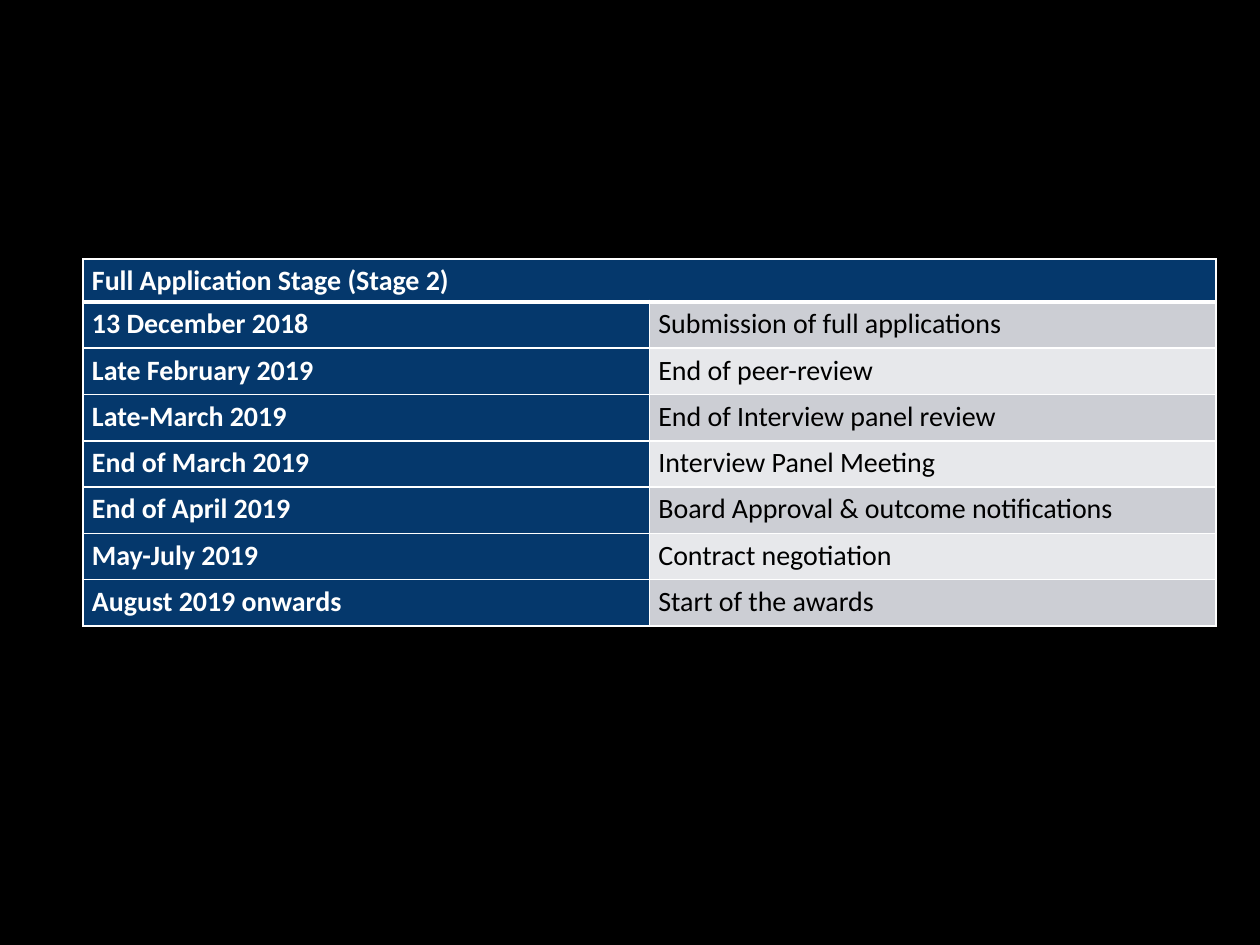
from lxml import etree
from pptx import Presentation
from pptx.dml.color import RGBColor
from pptx.enum.text import MSO_ANCHOR, PP_ALIGN
from pptx.oxml.ns import qn
from pptx.util import Pt

JUSTIFY = PP_ALIGN.JUSTIFY
TOP = MSO_ANCHOR.TOP

BLACK = RGBColor(0x00, 0x00, 0x00)
WHITE = RGBColor(0xFF, 0xFF, 0xFF)
NAVY = RGBColor(0x05, 0x38, 0x6C)
BANDS = (RGBColor(0xCC, 0xCE, 0xD4), RGBColor(0xE7, 0xE8, 0xEB))

PX = 914400 / 126  # EMU in one px
BLANK_LAYOUT = 6

TITLE = "Full Application Stage (Stage 2)"
STAGES = [
    ("13 December 2018", "Submission of full applications"),
    ("Late February 2019", "End of peer-review"),
    ("Late-March 2019", "End of Interview panel review"),
    ("End of March 2019", "Interview Panel Meeting"),
    ("End of April 2019", "Board Approval & outcome notifications"),
    ("May-July 2019", "Contract negotiation"),
    ("August 2019 onwards", "Start of the awards"),
]


def emu(px):
    return round(px * PX)


class SlideBuilder:
    font = "Calibri"
    size = Pt(16)
    inset = 9
    line = 1
    header_line = 3

    def __init__(self, s):
        self.s = s

    def background(self, color):
        fill = self.s.background.fill
        fill.solid()
        fill.fore_color.rgb = color

    def borders(self, cell, top, bottom):
        tc_pr = cell._tc.get_or_add_tcPr()
        widths = {"L": self.line, "R": self.line, "T": top, "B": bottom}
        for side, width in widths.items():
            ln = etree.SubElement(tc_pr, qn(f"a:ln{side}"), w=str(Pt(width)))
            solid = etree.SubElement(ln, qn("a:solidFill"))
            etree.SubElement(solid, qn("a:srgbClr"), val=str(WHITE))

    def cell(self, cell, text, fill, color, bold, top=line, bottom=line):
        # Borders come before the fill in the cell properties
        self.borders(cell, top, bottom)
        cell.fill.solid()
        cell.fill.fore_color.rgb = fill
        cell.margin_left = cell.margin_right = emu(self.inset)
        cell.margin_top = cell.margin_bottom = 0
        cell.vertical_anchor = TOP
        p = cell.text_frame.paragraphs[0]
        p.alignment = JUSTIFY
        p.line_spacing = 1.15
        r = p.add_run()
        r.text = text
        r.font.name = self.font
        r.font.size = self.size
        r.font.bold = bold
        r.font.color.rgb = color

    def schedule(self, title, stages, x, y, w, h, header_h):
        table = self.s.shapes.add_table(
            len(stages) + 1, 2, emu(x), emu(y), emu(w), emu(h)).table
        for col in table.columns:
            col.width = emu(w / 2)
        for i, row in enumerate(table.rows):
            row.height = emu((h - header_h) / len(stages) if i else header_h)

        # Header across both columns
        header = table.cell(0, 0)
        header.merge(table.cell(0, 1))
        self.cell(header, title, NAVY, WHITE, True, bottom=self.header_line)

        # Dates and banded activities
        for i, (date, activity) in enumerate(stages):
            top = self.line if i else self.header_line
            self.cell(table.cell(i + 1, 0), date, NAVY, WHITE, True, top=top)
            self.cell(table.cell(i + 1, 1), activity, BANDS[i % 2], BLACK,
                      False, top=top)


def main():
    prs = Presentation()
    prs.slide_width, prs.slide_height = emu(1260), emu(945)
    s = prs.slides.add_slide(prs.slide_layouts[BLANK_LAYOUT])
    builder = SlideBuilder(s)
    builder.background(BLACK)
    builder.schedule(TITLE, STAGES, 83, 259, 1133, 367, 43)
    prs.save("out.pptx")


if __name__ == "__main__":
    main()
